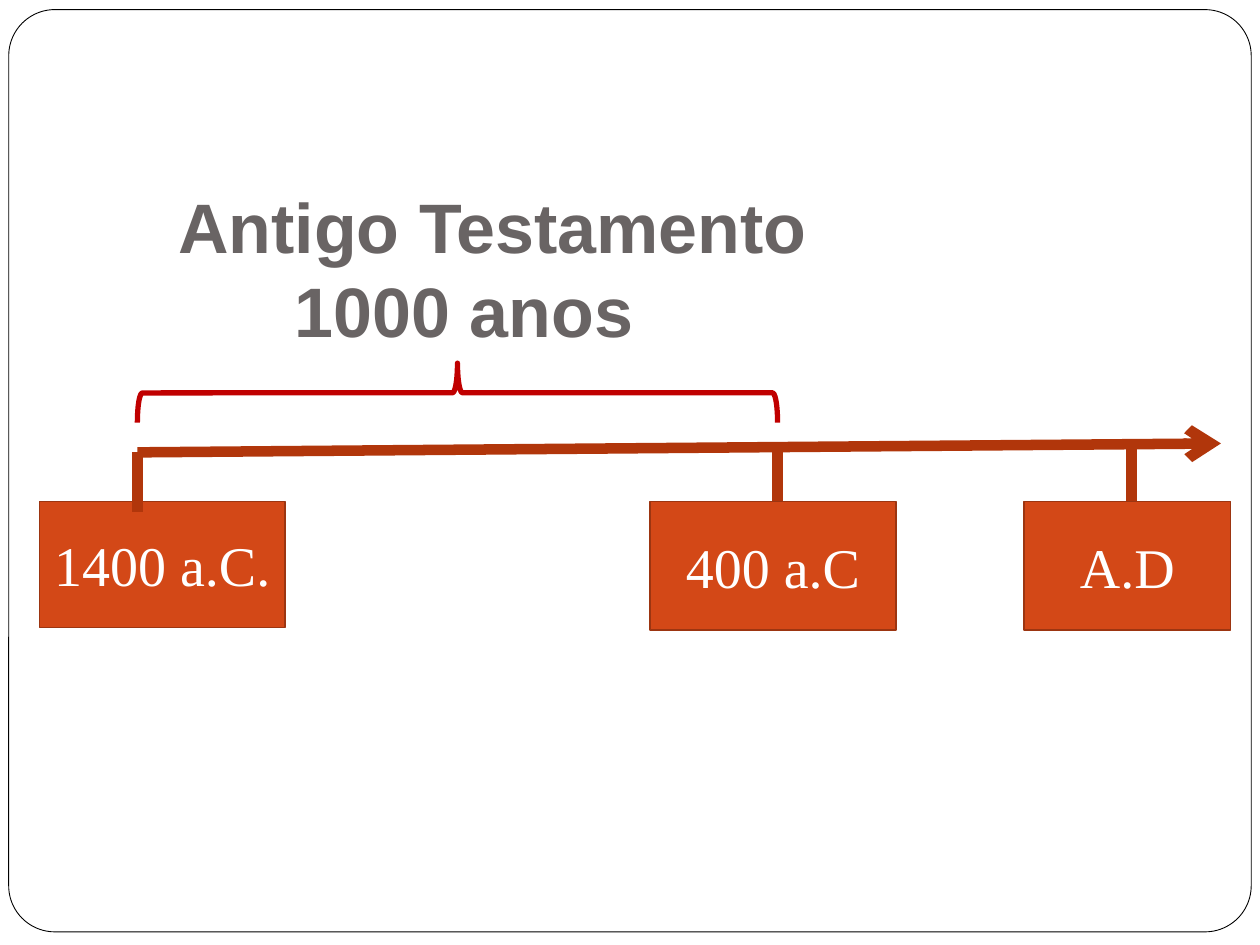
from lxml.etree import SubElement
from pptx import Presentation
from pptx.dml.color import RGBColor
from pptx.enum.shapes import MSO_CONNECTOR as Connector, MSO_SHAPE as Shape
from pptx.enum.text import MSO_ANCHOR as Anchor, MSO_AUTO_SIZE as AutoSize, PP_ALIGN as Align
from pptx.oxml.ns import qn
from pptx.util import Pt

COLORS = {
    "white": "FFFFFF",
    "frame": "000000",
    "timeline": "B1360B",
    "box": "D34817",
    "box_line": "9C3511",
    "brace": "C00000",
    "title": "696464",
}
DATE_FONT = {"name": "Times New Roman", "size": Pt(32)}
TITLE_FONT = {"name": "Arial", "size": Pt(40), "bold": True}
BOX_TOP = 286.56
AXIS_START, AXIS_END = (78.5, 258.5), (697.7, 253.4)


def color(name):
    return RGBColor.from_string(COLORS[name])


def format_font(font, values, color_name):
    for attribute, value in values.items():
        setattr(font, attribute, value)
    font.color.rgb = color(color_name)


def add_outlined_shape(slide, kind, bounds, fill, line, width):
    shape = slide.shapes.add_shape(kind, *map(Pt, bounds))
    shape.shadow.inherit = False
    shape.fill.solid()
    shape.fill.fore_color.rgb = color(fill)
    shape.line.color.rgb = color(line)
    shape.line.width = Pt(width)
    return shape


def add_line(slide, start, end, arrow=False):
    connector = slide.shapes.add_connector(Connector.STRAIGHT, *map(Pt, (*start, *end)))
    connector.line.color.rgb = color("timeline")
    connector.line.width = Pt(6)
    if arrow:
        SubElement(connector.line._get_or_add_ln(), qn("a:tailEnd"), type="arrow")
    SubElement(connector._element.spPr, qn("a:effectLst"))


def add_date_box(slide, text, left, width, height):
    box = add_outlined_shape(slide, Shape.RECTANGLE, (left, BOX_TOP, width, height),
                             "box", "box_line", 1)
    frame = box.text_frame
    frame.word_wrap = True
    frame.vertical_anchor = Anchor.MIDDLE
    paragraph = frame.paragraphs[0]
    paragraph.alignment = Align.CENTER
    run = paragraph.add_run()
    run.text = text
    format_font(run.font, DATE_FONT, "white")


def add_title(slide, lines, bounds):
    """Write one paragraph for each (text, left indent) pair."""
    frame = slide.shapes.add_textbox(*map(Pt, bounds)).text_frame
    frame.word_wrap = True
    frame.auto_size = AutoSize.SHAPE_TO_FIT_TEXT
    for index, (text, indent) in enumerate(lines):
        paragraph = frame.add_paragraph() if index else frame.paragraphs[0]
        paragraph._p.get_or_add_pPr().set("marL", str(Pt(indent)))
        run = paragraph.add_run()
        run.text = text
        format_font(run.font, TITLE_FONT, "title")


def add_brace(slide, left, top, width, height):
    """Turn a left brace so that it spans the given area and points up."""
    center_x, center_y = left + width / 2, top + height / 2
    bounds = (center_x - height / 2, center_y - width / 2, height, width)
    brace = add_outlined_shape(slide, Shape.LEFT_BRACE, bounds, "white", "brace", 3)
    brace.rotation = 90


def main():
    presentation = Presentation()
    presentation.slide_width, presentation.slide_height = Pt(720), Pt(540)
    slide = presentation.slides.add_slide(presentation.slide_layouts[6])

    frame = add_outlined_shape(slide, Shape.ROUNDED_RECTANGLE, (5, 5.5, 710, 527),
                               "white", "frame", 0.5)
    frame.adjustments[0] = 0.05

    add_line(slide, AXIS_START, AXIS_END, arrow=True)
    add_date_box(slide, "1400 a.C.", 22.5, 140.5, 72)
    add_line(slide, AXIS_START, (AXIS_START[0], 292.5))
    for x in (444.2, 646.6):
        add_line(slide, (x, AXIS_END[1]), (x, BOX_TOP))

    add_brace(slide, 78.5, 207.5, 365.8, 34)
    add_title(slide, [("Antigo Testamento", 44.5), ("1000 anos", 111)],
              (50.4, 101.5, 422, 104.4))
    add_date_box(slide, "400 a.C", 371.5, 140.5, 73.5)
    add_date_box(slide, "A.D", 585.2, 118, 73.5)

    presentation.save("out.pptx")


if __name__ == "__main__":
    main()
